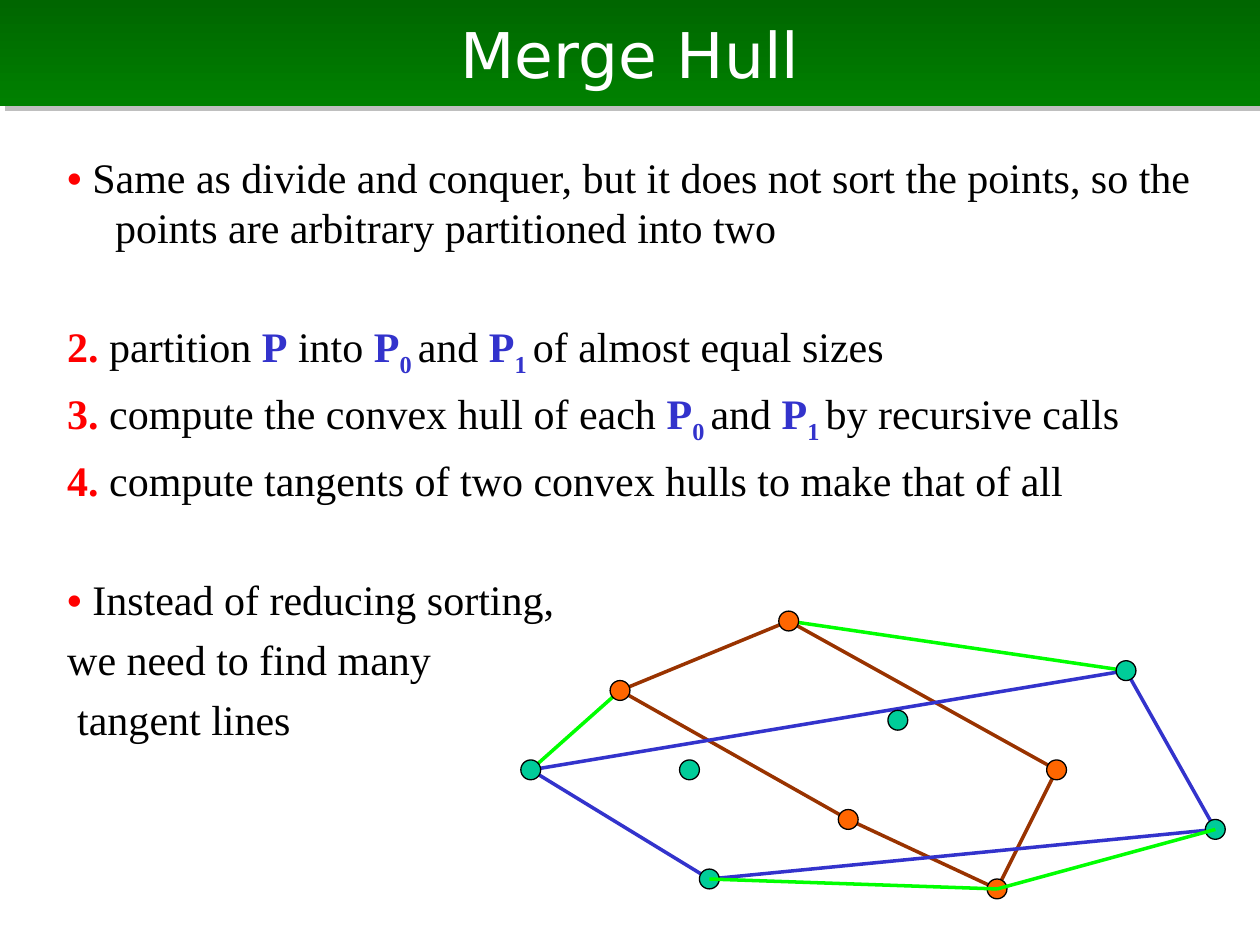
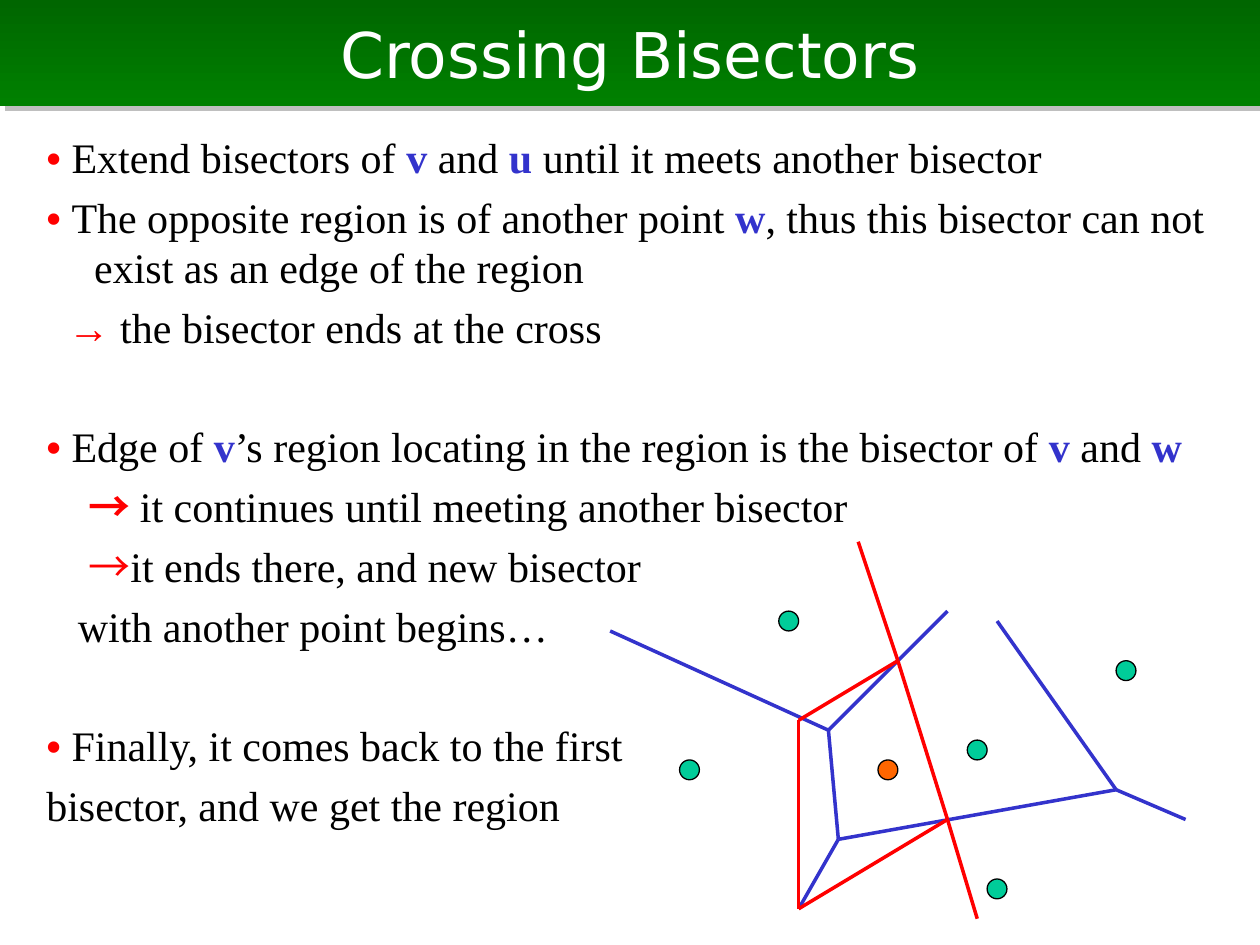
"""Build two slides on merging hulls and crossing bisectors."""
from itertools import pairwise

from lxml.etree import SubElement
from pptx import Presentation
from pptx.dml.color import RGBColor
from pptx.enum.shapes import MSO_CONNECTOR as Link, MSO_SHAPE as Form
from pptx.enum.text import MSO_ANCHOR as Anchor, MSO_AUTO_SIZE as Fit, PP_ALIGN as Align
from pptx.oxml.ns import qn
from pptx.util import Cm, Inches, Pt

BLACK = RGBColor(0, 0, 0)
WHITE = RGBColor(255, 255, 255)
RED = RGBColor(255, 0, 0)
BLUE = RGBColor(0x33, 0x33, 0xCC)
BROWN = RGBColor(0x99, 0x33, 0)
LIME = RGBColor(0, 255, 0)
TEAL = RGBColor(0, 0xCC, 0x99)
ORANGE = RGBColor(255, 0x66, 0)
BAND = (RGBColor(0, 0x66, 0), RGBColor(0, 0x80, 0))

CELL = Cm(0.2)
DIAGRAM = (53.5, 54.6)
HANG = Inches(0.38)
BEFORE = Pt(5.5)
BEFORE_GAP = Pt(39.2)

PLAIN = {"color": BLACK, "bold": False}
MARK = {"color": RED, "bold": True}
ARROW = {"color": RED, "bold": False}
NAME = {"color": BLUE, "bold": True}
SUB = NAME | {"baseline": "-25000"}
BULLET = ("• ", MARK)


def grid(*cells):
    """Turn grid cells into lengths."""
    return [round(cell * CELL) for cell in cells]


def line(*spans, gap=False, lead=0):
    """Describe one paragraph; bare strings are plain text."""
    styled = [(span, PLAIN) if isinstance(span, str) else span for span in spans]
    return styled, gap, lead


class Deck:
    """Holds the shared style and the current slide."""

    def __init__(self):
        """Start an empty deck of 10 by 7.5 inches."""
        self.show = Presentation()
        self.show.slide_width, self.show.slide_height = Inches(10), Inches(7.5)
        self.page = None

    def add_page(self, title):
        """Add a slide with its title band."""
        self.page = self.show.slides.add_slide(self.show.slide_layouts[1])
        band = self.page.shapes.title
        self.place(band, 0, 0, 127, 10.67)
        band.fill.gradient()
        band.fill.gradient_angle = 270
        for stop, color, position in zip(band.fill.gradient_stops, BAND, (0, 1)):
            stop.color.rgb = color
            stop.position = position
        self.cast_shadow(band)
        self.set_frame(band.text_frame, Anchor.MIDDLE)
        para = band.text_frame.paragraphs[0]
        para.alignment = Align.CENTER
        self.add_span(para, title, {"color": WHITE, "bold": False}, "DejaVu Sans", 36)

    def place(self, shape, *cells):
        """Put a shape at left, top, width and height in grid cells."""
        for side, length in zip(("left", "top", "width", "height"), grid(*cells)):
            setattr(shape, side, length)

    def set_frame(self, frame, anchor):
        """Give a text frame fixed size, wrapping and anchor."""
        layout = {"word_wrap": True, "auto_size": Fit.NONE, "vertical_anchor": anchor}
        for key, value in layout.items():
            setattr(frame, key, value)

    def cast_shadow(self, shape):
        """Give a shape a hard grey shadow to the lower right."""
        effects = SubElement(shape._element.spPr, qn("a:effectLst"))
        shadow = SubElement(effects, qn("a:outerShdw"), dist=str(Pt(4.2)),
                            dir="2700000", algn="ctr", rotWithShape="0")
        color = SubElement(shadow, qn("a:srgbClr"), val="808080")
        SubElement(color, qn("a:alpha"), val="50000")

    def add_span(self, para, text, style, face="Times New Roman", size=24):
        """Add one formatted run to a paragraph."""
        span = para.add_run()
        span.text = text
        for key, value in {"name": face, "size": Pt(size), "bold": style["bold"]}.items():
            setattr(span.font, key, value)
        span.font.color.rgb = style["color"]
        if "baseline" in style:
            span._r.get_or_add_rPr().set("baseline", style["baseline"])

    def add_body(self, cells, lines):
        """Fill the body placeholder with hanging paragraphs."""
        box = self.page.placeholders[1]
        self.place(box, *cells)
        frame = box.text_frame
        self.set_frame(frame, Anchor.TOP)
        for index, (spans, gap, lead) in enumerate(lines):
            para = frame.add_paragraph() if index else frame.paragraphs[0]
            para.space_before = BEFORE_GAP if gap else BEFORE
            props = para._p.get_or_add_pPr()
            props.set("marL", str(HANG))
            props.set("indent", str(Inches(lead) - HANG))
            SubElement(props, qn("a:buNone"))
            for text, style in spans:
                self.add_span(para, text, style)

    def add_path(self, color, *points):
        """Join diagram points with straight lines."""
        for start, end in pairwise(points):
            ends = [place + base for point in (start, end)
                    for place, base in zip(point, DIAGRAM)]
            edge = self.page.shapes.add_connector(Link.STRAIGHT, *grid(*ends))
            edge.line.color.rgb = color
            edge.line.width = Pt(2)
            SubElement(edge._element.spPr, qn("a:effectLst"))

    def add_dots(self, color, *points):
        """Draw a dot centred on each diagram point."""
        for column, row in points:
            corner = column + DIAGRAM[0] - 1, row + DIAGRAM[1] - 1
            dot = self.page.shapes.add_shape(Form.OVAL, *grid(*corner, 2, 2))
            dot.shadow.inherit = False
            dot.fill.solid()
            dot.fill.fore_color.rgb = color
            dot.line.color.rgb = BLACK
            dot.line.width = Pt(0.75)


def add_merge_hull(deck):
    """Show two overlapping hulls and their tangents."""
    deck.add_page("Merge Hull")
    halves = [("P", NAME), ("0 ", SUB), "and ", ("P", NAME), ("1 ", SUB)]
    deck.add_body((5.5, 14.6, 118, 55), [
        line(BULLET, "Same as divide and conquer, but it does not sort the points, "
                     "so the points are arbitrary partitioned into two"),
        line(("2. ", MARK), "partition ", ("P", NAME), " into ", *halves,
             "of almost equal sizes", gap=True),
        line(("3. ", MARK), "compute the convex hull of each ", *halves,
             "by recursive calls"),
        line(("4. ", MARK), "compute tangents of two convex hulls to make that of all"),
        line(BULLET, "Instead of reducing sorting,", gap=True),
        line("we need to find many"),
        line("tangent lines", lead=0.08),
    ])
    top, right, bottom, inner, left = orange_hull = [
        (26, 8), (53, 23), (47, 35), (32, 28), (9, 15)]
    west, south, east, north = teal_hull = [(0, 23), (18, 34), (69, 29), (60, 13)]
    deck.add_path(BROWN, *orange_hull, top)
    deck.add_path(BLUE, *teal_hull, west)
    deck.add_path(LIME, left, west)
    deck.add_path(LIME, top, north)
    deck.add_dots(ORANGE, *orange_hull)
    deck.add_dots(TEAL, *teal_hull, (16, 23), (37, 18))
    deck.add_path(LIME, south, bottom, east)


def add_crossing_bisectors(deck):
    """Show a new region cut into the existing edges."""
    deck.add_page("Crossing Bisectors")
    deck.add_body((3.4, 12.6, 121, 55), [
        line(BULLET, "Extend bisectors of ", ("v ", NAME), "and ", ("u ", NAME),
             "until it meets another bisector"),
        line(BULLET, "The opposite region is of another point ", ("w", NAME),
             ", thus this bisector can not exist as an edge of the region"),
        line(("→ ", MARK), "the bisector ends at the cross", lead=0.17),
        line(BULLET, "Edge of ", ("v", NAME),
             "’s region locating in the region is the bisector of ",
             ("v ", NAME), "and ", ("w", NAME), gap=True),
        line(("　→ ", MARK), "it continues until meeting another bisector"),
        line(("　", MARK), ("→", ARROW), "it ends there, and new bisector"),
        line("with another point begins…", lead=0.25),
        line(BULLET, "Finally, it comes back to the first", gap=True),
        line("bisector, and we get the region"),
    ])
    upper, lower, far, base = (30, 19), (31, 30), (59, 25), (27, 37)
    entry, leave = (37, 12), (42, 28)
    deck.add_dots(TEAL, (26, 8), (60, 13), (47, 35), (16, 23), (45, 21))
    deck.add_path(BLUE, (8, 9), upper, (42, 7))
    deck.add_path(BLUE, upper, lower, base)
    deck.add_path(BLUE, lower, far, (47, 8))
    deck.add_path(BLUE, far, (66, 28))
    deck.add_dots(ORANGE, (36, 23))
    deck.add_path(RED, (33, 0), entry, leave, (45, 38))
    deck.add_path(RED, entry, (27, 18), base, leave)


def main():
    """Build and save the deck."""
    deck = Deck()
    add_merge_hull(deck)
    add_crossing_bisectors(deck)
    deck.show.save("out.pptx")


if __name__ == "__main__":
    main()
